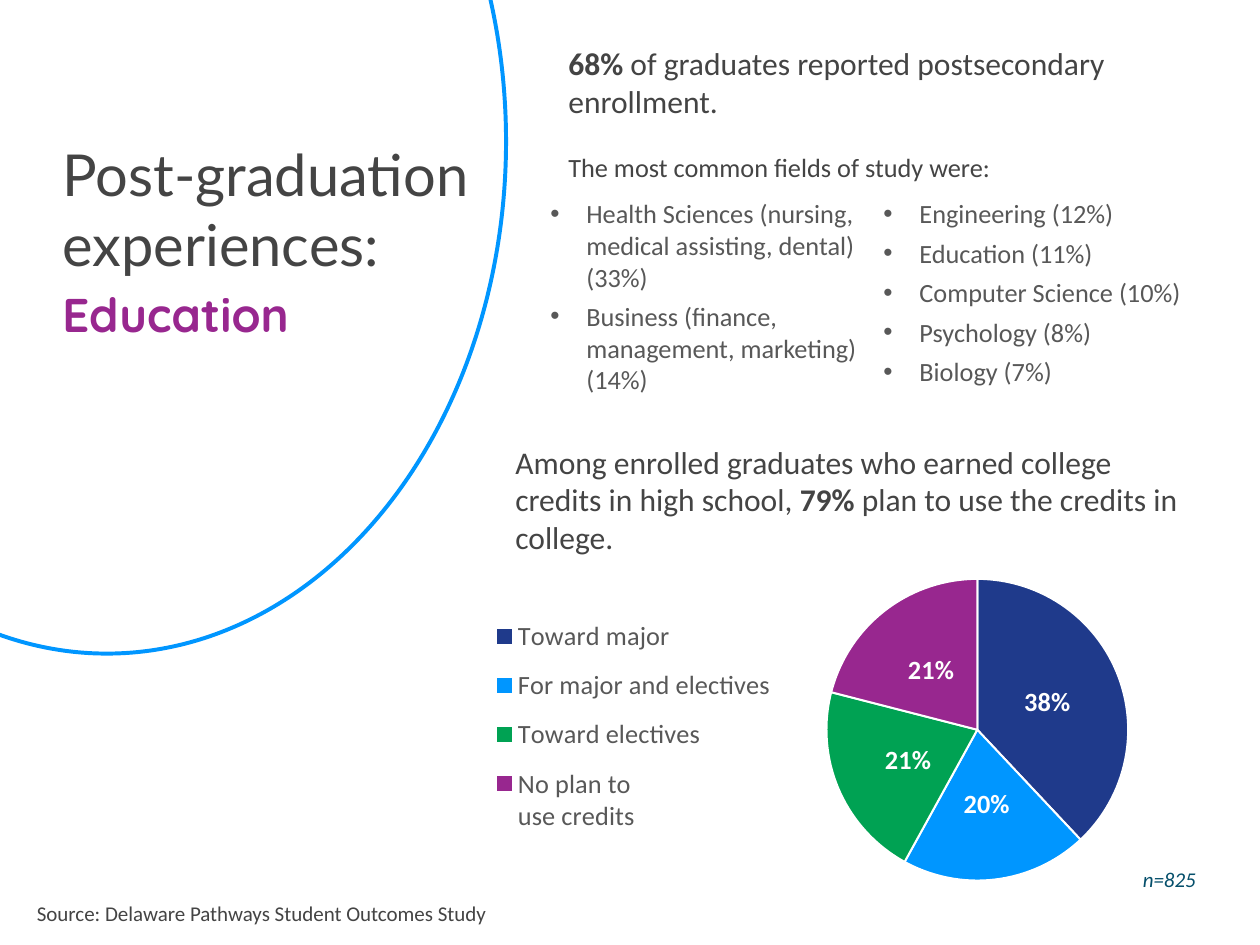
from lxml import etree
from pptx import Presentation
from pptx import util as u
from pptx.chart.data import CategoryChartData
from pptx.dml.color import RGBColor
from pptx.enum import chart as ch, shapes, text
from pptx.oxml import parse_xml
from pptx.oxml.ns import nsdecls, qn

DARK = RGBColor(0x44, 0x44, 0x44)
GREY = RGBColor(0x58, 0x58, 0x58)
TEAL = RGBColor(0x05, 0x4F, 0x6B)
WHITE = RGBColor(0xFF, 0xFF, 0xFF)
NAVY = RGBColor(0x1F, 0x3A, 0x8B)
BLUE = RGBColor(0x00, 0x96, 0xFF)
GREEN = RGBColor(0x00, 0xA2, 0x53)
PURPLE = RGBColor(0x98, 0x27, 0x8F)
FONT = "Calibri"

TITLE = [("Post-graduation experiences:", "Lato", 44, DARK, False),
         ("Education", "Quicksand", 36, PURPLE, True)]
ENROLL = [("68% ", True), ("of graduates reported postsecondary enrollment.", False)]
INTRO = "The most common fields of study were:"
FIELDS = ["Health Sciences (nursing, medical assisting, dental) (33%)",
          "Business (finance, management, marketing) (14%)",
          "Engineering (12%)", "Education (11%)", "Computer Science (10%)",
          "Psychology (8%)", "Biology (7%)"]
CREDITS = [("Among enrolled graduates who earned college credits in high school, ", False),
           ("79%", True), (" plan to use the credits in college.", False)]
SOURCE = "Source: Delaware Pathways Student Outcomes Study"
COUNT = "n=825"
PLANS = [("Toward major", 0.38, NAVY), ("For major and electives", 0.2, BLUE),
         ("Toward electives", 0.21, GREEN), ("No plan to\nuse credits", 0.21, PURPLE)]

CHART = (4.41, 5.97, 8.69, 3.49)
PIE = (8.74, 6.12, 3.19, 3.19)
LEGEND = (5.1, 6.38, 3.2, 2.6)


def place(box):
    """Turn a box in inches into lengths."""
    return [u.Inches(n) for n in box]


def style(font, size, color, bold=False, name=FONT):
    """Set the look of a font."""
    font.name, font.size, font.bold = name, u.Pt(size), bold
    font.color.rgb = color


def add_text(slide, box):
    """Add a wrapping text box and return its frame."""
    frame = slide.shapes.add_textbox(*place(box)).text_frame
    frame.word_wrap = True
    return frame


def write(para, parts, size, color=DARK):
    """Fill a paragraph with plain and bold runs."""
    for words, bold in parts:
        run = para.add_run()
        run.text = words
        style(run.font, size, color, bold)


def add_title(slide):
    """Place the two-part title."""
    title = slide.shapes.title
    title.left, title.top, title.width, title.height = place((0.56, 1.42, 4.79, 4.67))
    frame = title.text_frame
    frame.text = "\n".join(row[0] for row in TITLE)
    frame.auto_size = text.MSO_AUTO_SIZE.NONE
    frame.vertical_anchor = text.MSO_ANCHOR.TOP
    for para, (_, name, size, color, bold) in zip(frame.paragraphs, TITLE):
        para.alignment = text.PP_ALIGN.LEFT
        para.space_after = u.Pt(6)
        style(para.runs[0].font, size, color, bold, name)


def add_arc(slide):
    """Draw the large outlined ellipse."""
    arc = slide.shapes.add_shape(shapes.MSO_SHAPE.OVAL, *place((-3.09, -3.92, 8.44, 10.83)))
    arc.shadow.inherit = False
    arc.fill.background()
    arc.line.color.rgb = BLUE
    arc.line.width = u.Pt(3)


def add_fields(slide):
    """List the fields of study in two columns."""
    frame = add_text(slide, (5.72, 2.04, 7.04, 1.98))
    frame.text = "\n".join(FIELDS)
    body = frame._txBody.bodyPr
    body.set("numCol", "2")
    body.set("spcCol", str(u.Inches(0.2)))
    indent = u.Inches(0.38)
    for para in frame.paragraphs:
        para.space_after = u.Pt(6)
        props = para._p.get_or_add_pPr()
        props.set("marL", str(indent))
        props.set("indent", str(-indent))
        etree.SubElement(props, qn("a:buFont")).set("typeface", "Arial")
        etree.SubElement(props, qn("a:buChar")).set("char", "•")
        style(para.runs[0].font, 20, GREY)


def layout(box, inner=False):
    """Build a manual chart layout from a box on the slide."""
    left, top, width, height = CHART
    parts = {"x": (box[0] - left) / width, "y": (box[1] - top) / height,
             "w": box[2] / width, "h": box[3] / height}
    target = '<c:layoutTarget val="inner"/>' if inner else ""
    modes = '<c:xMode val="edge"/><c:yMode val="edge"/>'
    sizes = "".join(f'<c:{key} val="{val:.3f}"/>' for key, val in parts.items())
    return parse_xml(f'<c:layout {nsdecls("c")}><c:manualLayout>{target}{modes}{sizes}'
                     "</c:manualLayout></c:layout>")


def add_pie(slide):
    """Chart the plans for college credits."""
    data = CategoryChartData(number_format="0%")
    data.categories = [row[0] for row in PLANS]
    data.add_series("Series 1", [row[1] for row in PLANS])
    pie = slide.shapes.add_chart(ch.XL_CHART_TYPE.PIE, *place(CHART), data).chart
    pie.has_title = False
    style(pie.font, 10, DARK)
    pie.has_legend = True
    legend = pie.legend
    legend.position = ch.XL_LEGEND_POSITION.LEFT
    legend.include_in_layout = False
    style(legend.font, 20, GREY)
    plot = pie.plots[0]
    plot.vary_by_categories = True
    for i, (_, _, color) in enumerate(PLANS):
        look = plot.series[0].points[i].format
        look.fill.solid()
        look.fill.fore_color.rgb = color
        look.line.color.rgb = WHITE
        look.line.width = u.Pt(1.5)
    labels = plot.series[0].data_labels
    labels.show_value = True
    labels.show_percentage = False
    labels.number_format, labels.number_format_is_linked = "0%", False
    labels.position = ch.XL_LABEL_POSITION.CENTER
    style(labels.font, 20, WHITE, True)
    area = pie._chartSpace.chart.plotArea
    for old in area.findall(qn("c:layout")):
        area.remove(old)
    area.insert(0, layout(PIE, True))
    node = legend._element
    for old in node.findall(qn("c:layout")):
        node.remove(old)
    node.find(qn("c:legendPos")).addnext(layout(LEGEND))


def main():
    """Build the slide and save it."""
    deck = Presentation()
    deck.slide_width, deck.slide_height = u.Inches(13.32), u.Inches(9.99)
    slide = deck.slides.add_slide(deck.slide_layouts[5])
    add_title(slide)
    add_arc(slide)
    write(add_text(slide, (5.35, 4.63, 7.2, 1.09)).paragraphs[0], CREDITS, 24)
    add_fields(slide)
    write(add_text(slide, (0.29, 9.47, 5.31, 0.37)).paragraphs[0], [(SOURCE, False)], 16)
    frame = add_text(slide, (5.91, 0.42, 6.85, 1.62))
    write(frame.paragraphs[0], ENROLL, 24)
    intro = frame.add_paragraph()
    intro.space_before = u.Pt(24)
    write(intro, [(INTRO, False)], 20)
    add_pie(slide)
    count = add_text(slide, (11.39, 9.11, 1.35, 0.37)).paragraphs[0]
    count.alignment = text.PP_ALIGN.RIGHT
    write(count, [(COUNT, False)], 16, TEAL)
    count.runs[0].font.italic = True
    deck.save("out.pptx")


if __name__ == "__main__":
    main()
